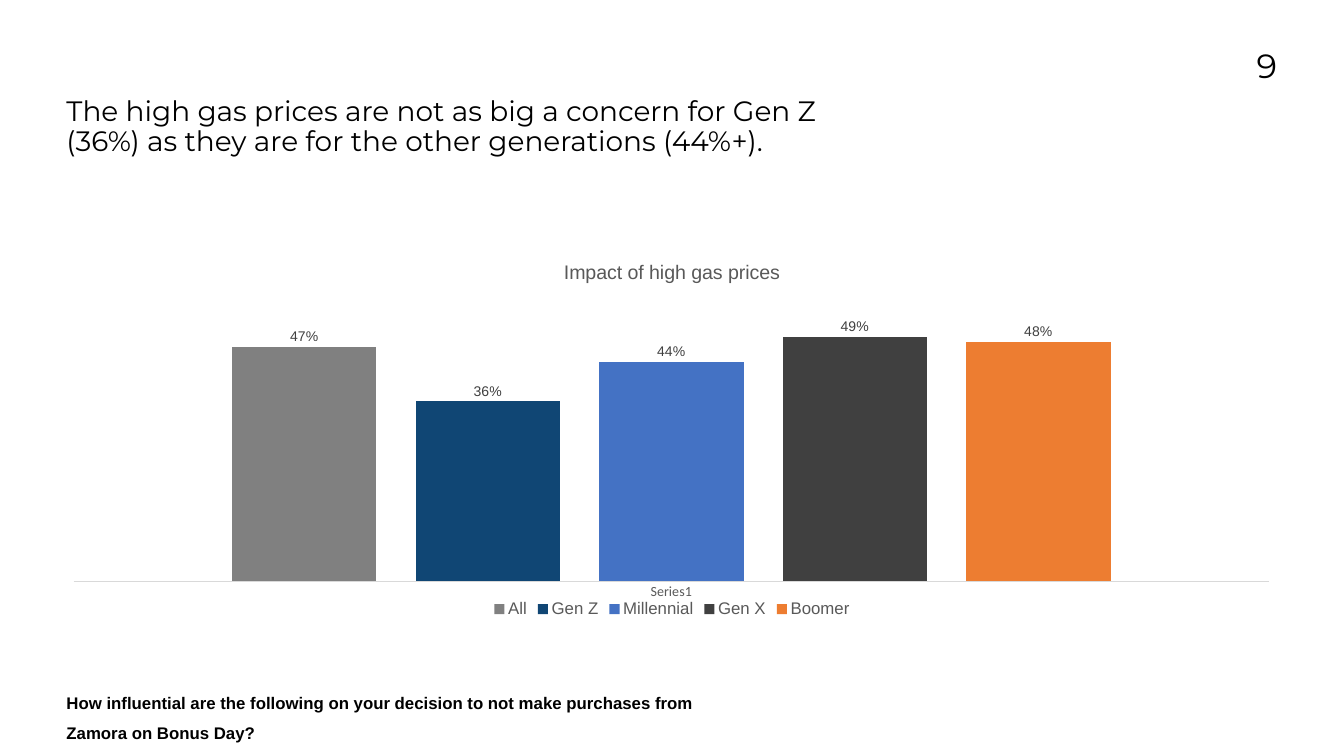
from typing import Any, NamedTuple

from lxml.etree import SubElement
from pptx import Presentation
from pptx.chart.data import CategoryChartData
from pptx.dml.color import RGBColor
from pptx.enum.chart import XL_CHART_TYPE as ChartType
from pptx.enum.chart import XL_LABEL_POSITION as LabelPosition
from pptx.enum.chart import XL_LEGEND_POSITION as LegendPosition
from pptx.enum.chart import XL_TICK_MARK as TickMark
from pptx.enum.text import MSO_ANCHOR as Anchor
from pptx.enum.text import MSO_AUTO_SIZE as AutoSize
from pptx.enum.text import PP_ALIGN as Align
from pptx.oxml.ns import qn
from pptx.util import Pt

COLORS = {
    "text": "000000",
    "muted": "595959",
    "label": "404040",
    "axis": "D9D9D9",
    "all": "808080",
    "gen_z": "104674",
    "millennial": "4472C4",
    "gen_x": "404040",
    "boomer": "ED7D31",
}
LEFT = 95


class Frame(NamedTuple):
    left: float
    top: float
    width: float
    height: float


class Generation(NamedTuple):
    name: str
    share: float
    color: str


GENERATIONS = [
    Generation("All", 0.47, "all"),
    Generation("Gen Z", 0.36, "gen_z"),
    Generation("Millennial", 0.44, "millennial"),
    Generation("Gen X", 0.49, "gen_x"),
    Generation("Boomer", 0.48, "boomer"),
]


def rgb(color: str) -> RGBColor:
    """Look up a named colour."""
    return RGBColor.from_string(COLORS[color])


def style_font(font: Any, size: float, name: str, color: str, bold: bool = False) -> None:
    """Apply size, typeface, colour and weight to a font."""
    for key, value in {"size": Pt(size), "name": name, "bold": bold}.items():
        setattr(font, key, value)
    font.color.rgb = rgb(color)


def fill_text(box: Any, frame: Frame, text: str, font: dict[str, Any],
              spacing: float = 1.0, align: Align = Align.LEFT) -> None:
    """Place a box and write one paragraph without insets."""
    for key, value in frame._asdict().items():
        setattr(box, key, Pt(value))
    body = box.text_frame
    settings = {"word_wrap": True, "auto_size": AutoSize.NONE, "vertical_anchor": Anchor.TOP,
                "margin_left": 0, "margin_top": 0, "margin_right": 0, "margin_bottom": 0}
    for key, value in settings.items():
        setattr(body, key, value)
    para = body.paragraphs[0]
    for key, value in {"alignment": align, "line_spacing": spacing, "space_before": Pt(0)}.items():
        setattr(para, key, value)
    span = para.add_run()
    span.text = text
    style_font(span.font, **font)


def add_text(page: Any, frame: Frame, *args: Any, **kwargs: Any) -> None:
    """Add a text box holding one paragraph."""
    box = page.shapes.add_textbox(*map(Pt, frame))
    fill_text(box, frame, *args, **kwargs)


def set_plot_layout(chart: Any, x: float, y: float, w: float, h: float) -> None:
    """Fix the inner plot area as fractions of the chart."""
    area = chart._chartSpace.chart.plotArea
    for old in area.findall(qn("c:layout")):
        area.remove(old)
    layout = SubElement(area, qn("c:layout"))
    area.insert(0, layout)
    manual = SubElement(layout, qn("c:manualLayout"))
    values = {"layoutTarget": "inner", "xMode": "edge", "yMode": "edge",
              "x": x, "y": y, "w": w, "h": h}
    for tag, value in values.items():
        SubElement(manual, qn(f"c:{tag}")).set("val", str(value))


def add_generation_chart(page: Any, frame: Frame) -> None:
    """Draw the clustered columns, one series per generation."""
    data = CategoryChartData(number_format="0%")
    data.categories = ["Series1"]
    for generation in GENERATIONS:
        data.add_series(generation.name, [generation.share])
    chart = page.shapes.add_chart(ChartType.COLUMN_CLUSTERED, *map(Pt, frame), data).chart
    style_font(chart.font, 10, "Calibri", "text")

    chart.has_title = True
    heading = chart.chart_title.text_frame
    heading.text = "Impact of high gas prices"
    style_font(heading.paragraphs[0].runs[0].font, 28, "Arial", "muted")
    chart.chart_title.include_in_layout = False

    chart.has_legend = True
    chart.legend.position = LegendPosition.BOTTOM
    chart.legend.include_in_layout = False
    style_font(chart.legend.font, 24, "Arial", "muted")

    category_axis = chart.category_axis
    category_axis.major_tick_mark = TickMark.NONE
    category_axis.format.line.width = Pt(0.75)
    category_axis.format.line.color.rgb = rgb("axis")
    style_font(category_axis.tick_labels.font, 20, "Calibri", "muted")

    axis_settings = {"visible": False, "has_major_gridlines": False,
                     "minimum_scale": 0, "maximum_scale": 0.6}
    for key, value in axis_settings.items():
        setattr(chart.value_axis, key, value)

    plot = chart.plots[0]
    for key, value in {"gap_width": 219, "overlap": -27, "vary_by_categories": False}.items():
        setattr(plot, key, value)
    label_settings = {"show_value": True, "position": LabelPosition.OUTSIDE_END,
                      "number_format": "0%", "number_format_is_linked": False}
    for series, generation in zip(plot.series, GENERATIONS):
        series.format.fill.solid()
        series.format.fill.fore_color.rgb = rgb(generation.color)
        for key, value in label_settings.items():
            setattr(series.data_labels, key, value)
        style_font(series.data_labels.font, 20, "Arial", "label")
    set_plot_layout(chart, 0.006, 0.095, 0.987, 0.796)


def main() -> None:
    """Build the gas price slide and save it."""
    deck = Presentation()
    deck.slide_width, deck.slide_height = Pt(1920.24), Pt(1080)
    page = deck.slides.add_slide(deck.slide_layouts[5])
    fill_text(
        page.shapes.title, Frame(LEFT, 139, 1177, 150),
        "The high gas prices are not as big a concern for Gen Z (36%) "
        "as they are for the other generations (44%+).",
        {"size": 40, "name": "Montserrat", "color": "text"}, spacing=0.9,
    )
    add_text(page, Frame(1662.5, 63.5, 162, 118), "9",
             {"size": 48, "name": "Montserrat", "color": "text"}, align=Align.RIGHT)
    add_generation_chart(page, Frame(LEFT, 351.5, 1730, 537))
    add_text(
        page, Frame(LEFT, 975.5, 966, 47),
        "How influential are the following on your decision to not make purchases "
        "from Zamora on Bonus Day?",
        {"size": 24, "name": "Arial", "color": "text", "bold": True}, spacing=1.5,
    )
    deck.save("out.pptx")


if __name__ == "__main__":
    main()
